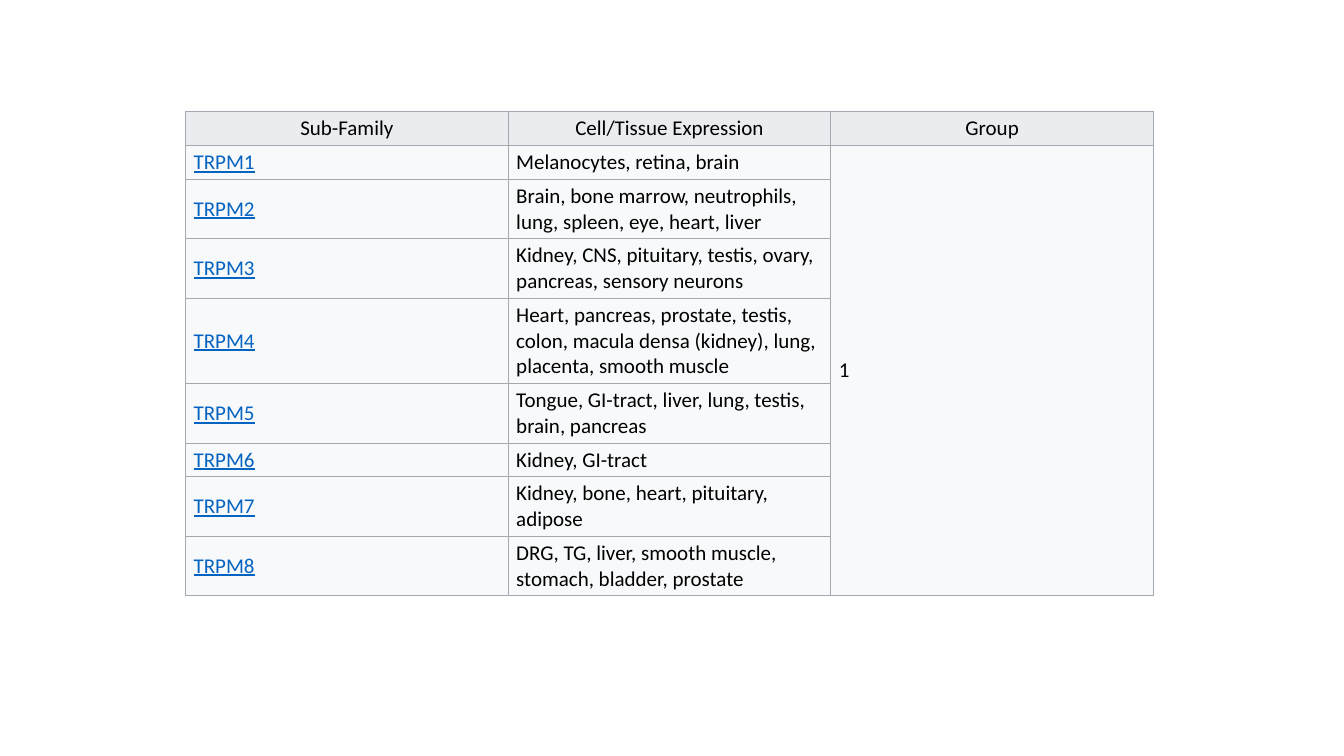
from lxml import etree
from pptx import Presentation
from pptx.dml.color import RGBColor
from pptx.enum.text import MSO_ANCHOR, PP_ALIGN
from pptx.oxml.ns import qn
from pptx.util import Inches, Pt

HEADER_FILL = RGBColor(0xEA, 0xEC, 0xF0)
BODY_FILL = RGBColor(0xF8, 0xF9, 0xFA)
BORDER = RGBColor(0xA2, 0xA9, 0xB1)
LINK_BLUE = RGBColor(0x05, 0x63, 0xC1)
BLACK = RGBColor(0x00, 0x00, 0x00)

HEADERS = ["Sub-Family", "Cell/Tissue Expression", "Group"]
# Tissues for TRPM1 to TRPM8, with the number of text lines each needs
EXPRESSION = [
    ("Melanocytes, retina, brain", 1),
    ("Brain, bone marrow, neutrophils, lung, spleen, eye, heart, liver", 2),
    ("Kidney, CNS, pituitary, testis, ovary, pancreas, sensory neurons", 2),
    ("Heart, pancreas, prostate, testis, colon, macula densa (kidney), "
     "lung, placenta, smooth muscle", 3),
    ("Tongue, GI-tract, liver, lung, testis, brain, pancreas", 2),
    ("Kidney, GI-tract", 1),
    ("Kidney, bone, heart, pituitary, adipose", 2),
    ("DRG, TG, liver, smooth muscle, stomach, bladder, prostate", 2),
]


def add_borders(cell):
    """Draw a thin line on all four sides of a cell."""
    properties = cell._tc.get_or_add_tcPr()
    for position, side in enumerate(["a:lnL", "a:lnR", "a:lnT", "a:lnB"]):
        line = etree.Element(qn(side), w=str(Pt(0.75)))
        fill = etree.SubElement(line, qn("a:solidFill"))
        etree.SubElement(fill, qn("a:srgbClr"), val=str(BORDER))
        properties.insert(position, line)


presentation = Presentation()
presentation.slide_width = Inches(13.33)
presentation.slide_height = Inches(7.5)
slide = presentation.slides.add_slide(presentation.slide_layouts[6])

# Table contents
rows = [HEADERS]
for number, (tissues, _) in enumerate(EXPRESSION, start=1):
    rows.append([f"TRPM{number}", tissues, "1" if number == 1 else ""])
line_counts = [1] + [lines for _, lines in EXPRESSION]

# Table frame
table = slide.shapes.add_table(
    len(rows), len(HEADERS), Inches(1.84), Inches(1.11), Inches(9.6), Inches(4.76)
).table
table.horz_banding = False
for column in table.columns:
    column.width = Inches(3.2)
for row, lines in zip(table.rows, line_counts):
    row.height = Inches(0.33 + 0.25 * (lines - 1))

# Cells
for row_index, texts in enumerate(rows):
    is_header = row_index == 0
    for column_index, text in enumerate(texts):
        is_link = column_index == 0 and not is_header
        cell = table.cell(row_index, column_index)
        cell.vertical_anchor = MSO_ANCHOR.MIDDLE
        cell.margin_left = cell.margin_right = Inches(0.08)
        cell.margin_top = cell.margin_bottom = Inches(0.04)
        cell.fill.solid()
        cell.fill.fore_color.rgb = HEADER_FILL if is_header else BODY_FILL
        add_borders(cell)

        cell.text_frame.text = text
        paragraph = cell.text_frame.paragraphs[0]
        paragraph.alignment = PP_ALIGN.CENTER if is_header else PP_ALIGN.LEFT
        for run in paragraph.runs:
            run.font.name = "Calibri"
            run.font.size = Pt(15)
            run.font.bold = False
            run.font.underline = is_link
            run.font.color.rgb = LINK_BLUE if is_link else BLACK

# One group cell spans all sub-families
table.cell(1, 2).merge(table.cell(len(rows) - 1, 2))

presentation.save("out.pptx")
